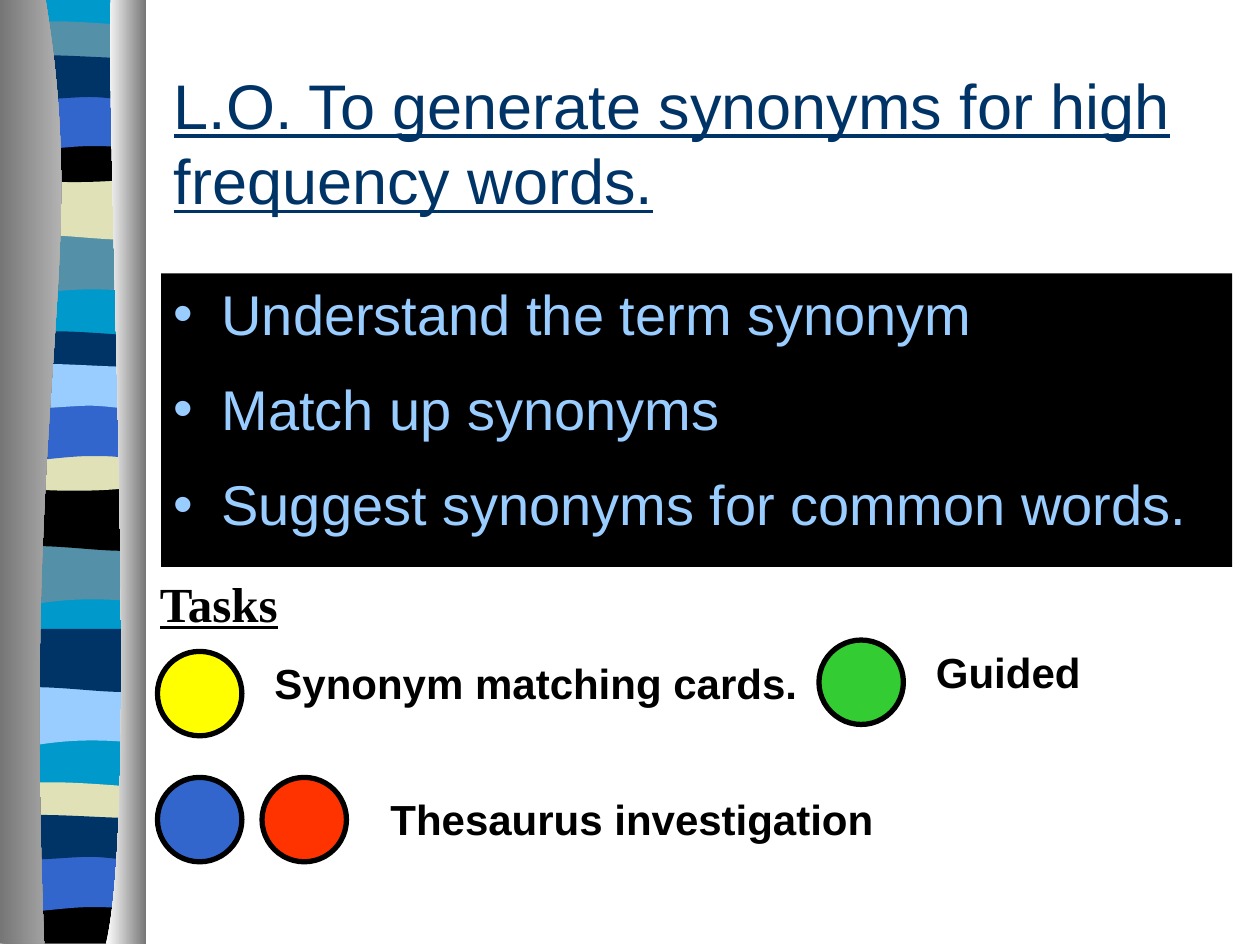
import dataclasses
import typing

import lxml.etree
import pptx
import pptx.dml.color
import pptx.enum.shapes
import pptx.enum.text
import pptx.oxml.ns
import pptx.util

Inches = pptx.util.Inches
Pt = pptx.util.Pt
qn = pptx.oxml.ns.qn
Outline = list[tuple[float, ...]]


@dataclasses.dataclass(frozen=True)
class Theme:
    sans: str = "Arial"
    serif: str = "Times New Roman"
    black: str = "000000"
    navy: str = "003366"
    blue: str = "3366CC"
    sky: str = "99CCFF"
    cyan: str = "0099CC"
    teal: str = "5490A8"
    sand: str = "E1E1B7"
    yellow: str = "FFFF00"
    red: str = "FF3300"
    green: str = "33CC33"
    grey: str = "767676"
    pale: str = "D0D0D0"
    white: str = "FFFFFF"
    title: float = 36
    body: float = 32
    heading: float = 28
    task: float = 24
    body_gap: float = 16
    outline: float = 3


@dataclasses.dataclass(frozen=True)
class Band:
    wave: str
    top: float
    color: str


@dataclasses.dataclass(frozen=True)
class Label:
    text: str
    left: float
    top: float
    width: float
    height: float
    size: float
    color: str
    font: str
    bold: bool = True
    underline: bool = False


@dataclasses.dataclass(frozen=True)
class Dot:
    left: float
    top: float
    color: str


T = Theme()
DOT_SIZE = 0.67
X0, X1 = 0.05, 1.13

WAVES: dict[str, Outline] = {
    "swell": [(X1, 0), (X1, 0.47), (0.38, 0.39, 0.23, 0.55, X0, 0.47), (X0, 0)],
    "ripple": [(X1, 0), (X1, 0.48), (0.96, 0.55, 0.39, 0.42, X0, 0.48), (X0, 0)],
    "crest": [(X1, 0.05), (X1, 0.29), (0.95, 0.33, 0.23, 0.33, X0, 0.29), (X0, 0.05),
              (0.12, 0, 0.28, 0.01, 0.46, 0.01), (0.64, 0.01, 0.99, 0.04, X1, 0.05)],
    "bowl": [(X1, 0), (X1, 0.32), (0.95, 0.38, 0.23, 0.38, X0, 0.32), (X0, 0),
             (0.71, 0.05, 0.9, 0, X1, 0)],
    "arch": [(X1, 0), (X1, 0.47), (0.96, 0.42, 0.89, 0.42, 0.71, 0.42),
             (0.53, 0.42, 0.21, 0.47, X0, 0.47), (X0, 0)],
    "drift": [(X1, 0.05), (X1, 0.36), (1.06, 0.41, 0.89, 0.36, 0.71, 0.36),
              (0.53, 0.36, 0.16, 0.41, X0, 0.36), (X0, 0.05),
              (0.2, 0, 0.78, 0.05, 0.96, 0.05), (1.14, 0.05, 1.1, 0.05, X1, 0.05)],
    "base": [(X1, 0), (X1, 0.37), (X0, 0.37), (X0, 0), (0.71, 0.05, 0.9, 0, X1, 0)],
}

BANDS = [
    Band("swell", 1.85, T.teal), Band("ripple", 1.4, T.sand), Band("crest", 0.16, T.teal),
    Band("bowl", 1.08, T.black), Band("arch", 0.74, T.blue), Band("drift", 0.41, T.navy),
    Band("swell", 4.31, T.teal), Band("ripple", 3.87, T.black), Band("crest", 2.62, T.navy),
    Band("bowl", 3.53, T.sand), Band("arch", 3.2, T.blue), Band("drift", 2.86, T.sky),
    Band("swell", 5.43, T.sky), Band("ripple", 4.99, T.navy), Band("crest", 6.2, T.sand),
    Band("base", 7.12, T.black), Band("arch", 6.78, T.blue), Band("drift", 6.44, T.navy),
]

RIBBON: Outline = [(1.14, -0.01), (1.14, 7.47), (0.06, 7.47), (0.06, -0.01)]
LEFT_EDGE: Outline = [(0.36, -0.01), (0.72, 2.16, 0.17, 2.96, 0.35, 7.49), (0, 7.49), (0, -0.01)]
RIGHT_EDGE: Outline = [(0.88, -0.01), (0.84, 1.25, 1.11, 6.46, 0.84, 7.49),
                       (1.16, 7.49), (1.16, 0)]

TITLE = Label("L.O. To generate synonyms for high frequency words.", 1.28, 0.5, 8.5, 1.25,
              T.title, T.navy, T.sans, bold=False, underline=True)
GOALS = ["Understand the term synonym", "Match up synonyms", "Suggest synonyms for common words."]
LABELS = [
    Label("Tasks", 1.17, 4.5, 2.92, 0.57, T.heading, T.black, T.serif, underline=True),
    Label("Synonym matching cards.", 2.08, 5.17, 6.08, 0.5, T.task, T.black, T.sans),
    Label("Thesaurus investigation", 3, 6.25, 6.08, 0.5, T.task, T.black, T.sans),
    Label("Guided", 7.33, 5.08, 1.67, 0.5, T.task, T.black, T.sans),
]
DOTS = [Dot(1.25, 5.17, T.yellow), Dot(1.25, 6.17, T.blue),
        Dot(2.08, 6.17, T.red), Dot(6.5, 5.08, T.green)]


def rgb(color: str) -> pptx.dml.color.RGBColor:
    return pptx.dml.color.RGBColor.from_string(color)


def paint(sp: typing.Any, color: str) -> None:
    sp.shadow.inherit = False
    sp.fill.solid()
    sp.fill.fore_color.rgb = rgb(color)
    sp.line.fill.background()


def bend(sp: typing.Any, outline: Outline) -> None:
    geometry = sp._element.find(".//" + qn("a:path"))
    lines = iter(geometry.findall(qn("a:lnTo")))
    for seg in outline[1:]:
        step = next(lines)
        if len(seg) == 6:
            step.tag = qn("a:cubicBezTo")
            for extra in (next(lines), next(lines)):
                step.append(extra[0])
                geometry.remove(extra)


def draw_outline(s: typing.Any, outline: Outline, color: str, top: float = 0) -> typing.Any:
    points = [(Inches(seg[i]), Inches(seg[i + 1] + top))
              for seg in outline for i in range(0, len(seg), 2)]
    builder = s.shapes.build_freeform(*points[0], scale=1.0)
    builder.add_line_segments(points[1:], close=True)
    sp = builder.convert_to_shape()
    bend(sp, outline)
    paint(sp, color)
    return sp


def draw_edge(s: typing.Any, outline: Outline, start: str, end: str) -> None:
    sp = draw_outline(s, outline, start)
    sp.fill.gradient()
    sp.fill.gradient_angle = 0
    for stop, color in zip(sp.fill.gradient_stops, (start, end)):
        stop.color.rgb = rgb(color)


def add_text(p: typing.Any, label: Label) -> None:
    p.alignment = pptx.enum.text.PP_ALIGN.LEFT
    r = p.add_run()
    r.text = label.text
    r.font.name = label.font
    r.font.size = Pt(label.size)
    r.font.bold = label.bold
    r.font.underline = label.underline
    r.font.color.rgb = rgb(label.color)


def draw_label(s: typing.Any, label: Label, anchor: typing.Any) -> None:
    sp = s.shapes.add_textbox(Inches(label.left), Inches(label.top),
                              Inches(label.width), Inches(label.height))
    tf = sp.text_frame
    tf.word_wrap = True
    tf.vertical_anchor = anchor
    add_text(tf.paragraphs[0], label)


def draw_goals(s: typing.Any, goals: list[str]) -> None:
    box = (1.28, 2.17, 8.5, 2.33)
    sp = s.shapes.add_shape(pptx.enum.shapes.MSO_SHAPE.RECTANGLE, *map(Inches, box))
    paint(sp, T.black)
    tf = sp.text_frame
    tf.word_wrap = True
    tf.vertical_anchor = pptx.enum.text.MSO_ANCHOR.TOP
    for i, goal in enumerate(goals):
        p = tf.add_paragraph() if i else tf.paragraphs[0]
        add_text(p, Label(goal, *box, T.body, T.sky, T.sans, bold=False))
        p.space_before = Pt(T.body_gap)
        pPr = p._p.get_or_add_pPr()
        pPr.set("marL", str(Inches(0.38)))
        pPr.set("indent", str(-Inches(0.38)))
        lxml.etree.SubElement(pPr, qn("a:buFont"), typeface=T.sans)
        lxml.etree.SubElement(pPr, qn("a:buChar"), char="•")


def draw_dot(s: typing.Any, dot: Dot) -> None:
    sp = s.shapes.add_shape(pptx.enum.shapes.MSO_SHAPE.OVAL, Inches(dot.left), Inches(dot.top),
                            Inches(DOT_SIZE), Inches(DOT_SIZE))
    paint(sp, dot.color)
    sp.line.color.rgb = rgb(T.black)
    sp.line.width = Pt(T.outline)


def main() -> None:
    prs = pptx.Presentation()
    prs.slide_width, prs.slide_height = Inches(10), Inches(7.5)
    s = prs.slides.add_slide(prs.slide_layouts[6])
    draw_outline(s, RIBBON, T.cyan)
    for band in BANDS:
        draw_outline(s, WAVES[band.wave], band.color, band.top)
    draw_edge(s, LEFT_EDGE, T.grey, T.pale)
    draw_edge(s, RIGHT_EDGE, T.white, T.grey)
    draw_label(s, TITLE, pptx.enum.text.MSO_ANCHOR.MIDDLE)
    draw_goals(s, GOALS)
    for dot in DOTS:
        draw_dot(s, dot)
    for label in LABELS:
        draw_label(s, label, pptx.enum.text.MSO_ANCHOR.TOP)
    prs.save("out.pptx")


if __name__ == "__main__":
    main()
